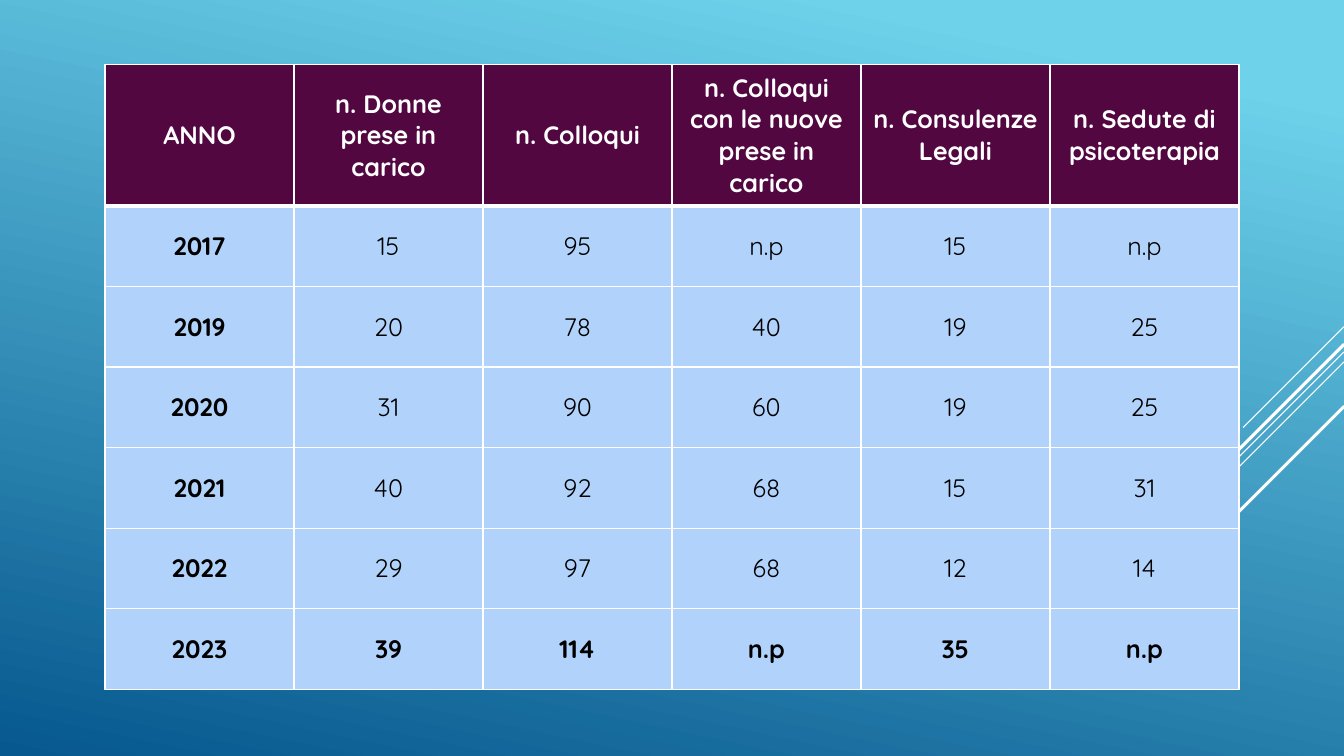
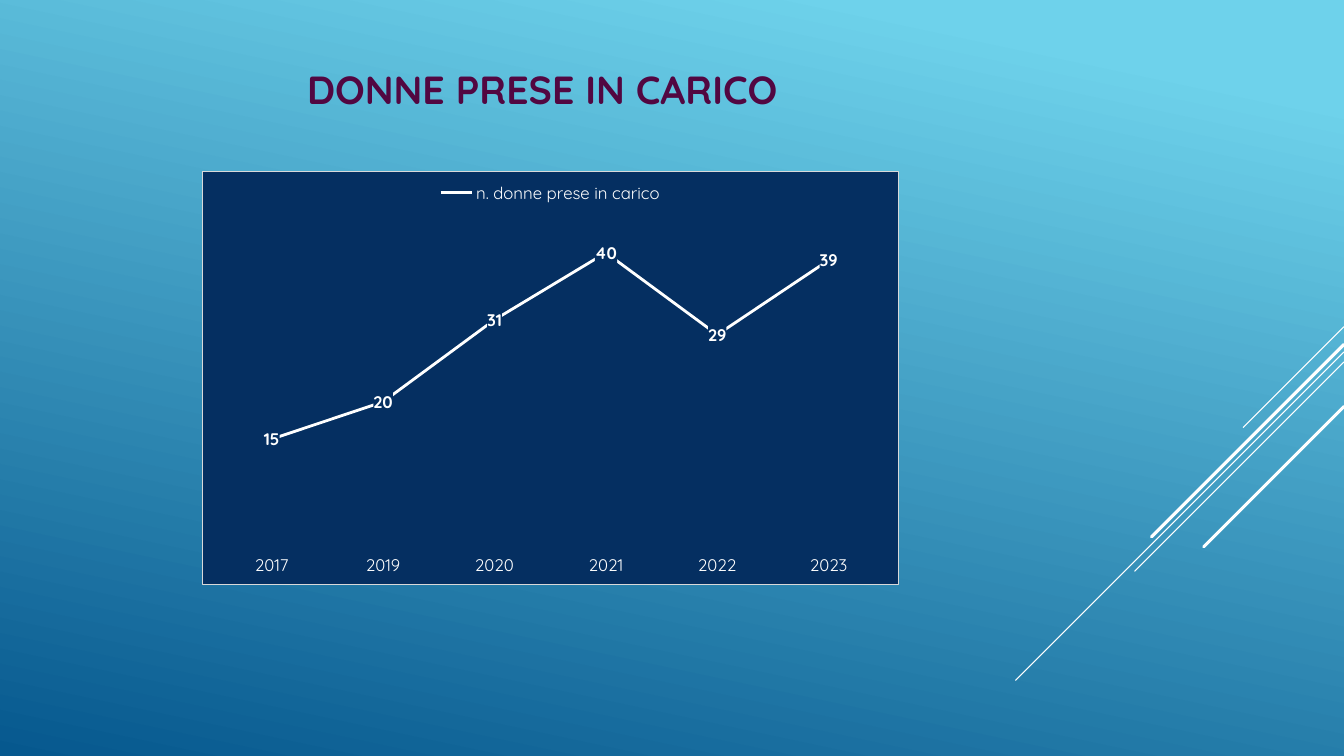
from dataclasses import dataclass

from pptx import Presentation
from pptx import util as u
from pptx.chart import data as chart_data
from pptx.dml.color import RGBColor
from pptx.enum import chart as charts, shapes, text as texts
from pptx.oxml import parse_xml
from pptx.oxml.ns import nsdecls, qn


@dataclass(frozen=True)
class Theme:
    font: str = "Quicksand"
    sky: str = "6ED2EB"
    sea: str = "06588E"
    plum: str = "520741"
    pale: str = "B1D3FB"
    navy: str = "052F61"
    frame: str = "D9D9D9"
    white: str = "FFFFFF"
    black: str = "000000"
    title: int = 28
    body: int = 18
    label: int = 12


theme = Theme()
deck = Presentation()
deck.slide_width, deck.slide_height = u.Inches(13.333), u.Inches(7.5)
COLUMNS, ROWS = 160, 90
unit = deck.slide_width / COLUMNS


def grid(*lengths):
    return [round(length * unit) for length in lengths]


def write(frame, words, size=theme.body, color=theme.black, bold=False,
          align=texts.PP_ALIGN.LEFT):
    para = frame.paragraphs[0]
    para.alignment = align
    span = para.add_run()
    span.text = words
    span.font.name = theme.font
    span.font.size = u.Pt(size)
    span.font.bold = bold
    span.font.color.rgb = RGBColor.from_string(color)


backdrop = deck.slide_master.background.fill
backdrop.gradient()
backdrop.gradient_angle = 258
for stop, color, position in zip(backdrop.gradient_stops,
                                 (theme.sky, theme.sea), (0.1, 1)):
    stop.color.rgb = RGBColor.from_string(color)
    stop.position = position

stripes = [(38.9, 12, 0.75), (41.9, 39.1, 0.75), (43.1, 24.9, 0.75),
           (41, 22.9, 2.25), (48.4, 16.7, 2.25)]
pages = [deck.slides.add_slide(deck.slide_layouts[6]) for number in range(2)]
for page in pages:
    for top, run, weight in stripes:
        stripe = page.shapes.add_connector(
            shapes.MSO_CONNECTOR.STRAIGHT,
            *grid(COLUMNS, top, COLUMNS - run, top + run))
        stripe.line.color.rgb = RGBColor.from_string(theme.white)
        stripe.line.width = u.Pt(weight)
        outline = stripe._element.spPr
        outline.find(qn("a:ln")).set("cap", "rnd")
        outline.append(parse_xml(f"<a:effectLst {nsdecls('a')}/>"))
table_page, chart_page = pages

headings = ["ANNO", "n. Donne prese in carico", "n. Colloqui",
            "n. Colloqui con le nuove prese in carico",
            "n. Consulenze Legali", "n. Sedute di psicoterapia"]
years = [
    ("2017", "15", "95", "n.p", "15", "n.p"),
    ("2019", "20", "78", "40", "19", "25"),
    ("2020", "31", "90", "60", "19", "25"),
    ("2021", "40", "92", "68", "15", "31"),
    ("2022", "29", "97", "68", "12", "14"),
    ("2023", "39", "114", "n.p", "35", "n.p"),
]
lines = [headings, *years]
column_width, header_height, row_height = 22.5, 16.8, 9.6
table_width = column_width * len(headings)
table = table_page.shapes.add_table(
    len(lines), len(headings),
    *grid((COLUMNS - table_width) / 2, 7.7, table_width,
          header_height + row_height * len(years))).table
table.horz_banding = False
for column in table.columns:
    column.width = grid(column_width)[0]
for index, line in enumerate(lines):
    header = index == 0
    table.rows[index].height = grid(header_height if header else row_height)[0]
    borders = {"L": 1, "R": 1, "T": 3 if index == 1 else 1, "B": 3 if header else 1}
    for position, words in enumerate(line):
        cell = table.cell(index, position)
        cell.vertical_anchor = texts.MSO_ANCHOR.MIDDLE
        cell.fill.solid()
        cell.fill.fore_color.rgb = RGBColor.from_string(
            theme.plum if header else theme.pale)
        write(cell.text_frame, words,
              color=theme.white if header else theme.black,
              bold=header or position == 0 or index == len(years),
              align=texts.PP_ALIGN.CENTER)
        properties = cell._tc.get_or_add_tcPr()
        for order, (side, weight) in enumerate(borders.items()):
            properties.insert(order, parse_xml(
                f'<a:ln{side} {nsdecls("a")} w="{u.Pt(weight)}"><a:solidFill>'
                f'<a:srgbClr val="{theme.white}"/></a:solidFill></a:ln{side}>'))

title = chart_page.shapes.add_textbox(*grid(35.4, 7.2, 60.2, 6.8))
title.text_frame.word_wrap = False
title.text_frame.auto_size = texts.MSO_AUTO_SIZE.SHAPE_TO_FIT_TEXT
write(title.text_frame, "DONNE PRESE IN CARICO", size=theme.title,
      color=theme.plum, bold=True)

figures = chart_data.CategoryChartData()
figures.categories = [line[0] for line in years]
figures.add_series("n. donne prese in carico", [int(line[1]) for line in years])
chart = chart_page.shapes.add_chart(
    charts.XL_CHART_TYPE.LINE, *grid(24, 20.3, 83, 49.3), figures).chart
chart.has_title = False
chart.has_legend = True
chart.legend.position = charts.XL_LEGEND_POSITION.TOP
chart.legend.include_in_layout = False
chart.value_axis.visible = False
chart.value_axis.has_major_gridlines = False
chart.value_axis.minimum_scale, chart.value_axis.maximum_scale = 0, 45
chart.category_axis.major_tick_mark = charts.XL_TICK_MARK.NONE
chart.category_axis.format.line.fill.background()

plot = chart.plots[0]
plot.vary_by_categories = False
plot.has_data_labels = True
labels = plot.data_labels
labels.show_value = True
labels.position = charts.XL_LABEL_POSITION.CENTER
for font in (chart.font, chart.legend.font,
             chart.category_axis.tick_labels.font, labels.font):
    font.name = theme.font
    font.size = u.Pt(theme.label)
    font.color.rgb = RGBColor.from_string(theme.white)
labels.font.bold = True

series = plot.series[0]
series.smooth = False
series.marker.style = charts.XL_MARKER_STYLE.NONE
series.format.line.color.rgb = RGBColor.from_string(theme.white)
series.format.line.width = u.Pt(2)

navy_fill = f'<a:solidFill><a:srgbClr val="{theme.navy}"/></a:solidFill>'
frame_line = (f'<a:ln w="{u.Pt(0.75)}"><a:solidFill>'
              f'<a:srgbClr val="{theme.frame}"/></a:solidFill></a:ln>')
chart_space = chart._chartSpace
chart_space.find(qn("c:chart")).addnext(parse_xml(
    f"<c:spPr {nsdecls('c', 'a')}>{navy_fill}{frame_line}</c:spPr>"))
labels._element.find(qn("c:txPr")).addprevious(parse_xml(
    f"<c:spPr {nsdecls('c', 'a')}>{navy_fill}</c:spPr>"))

deck.save("out.pptx")
